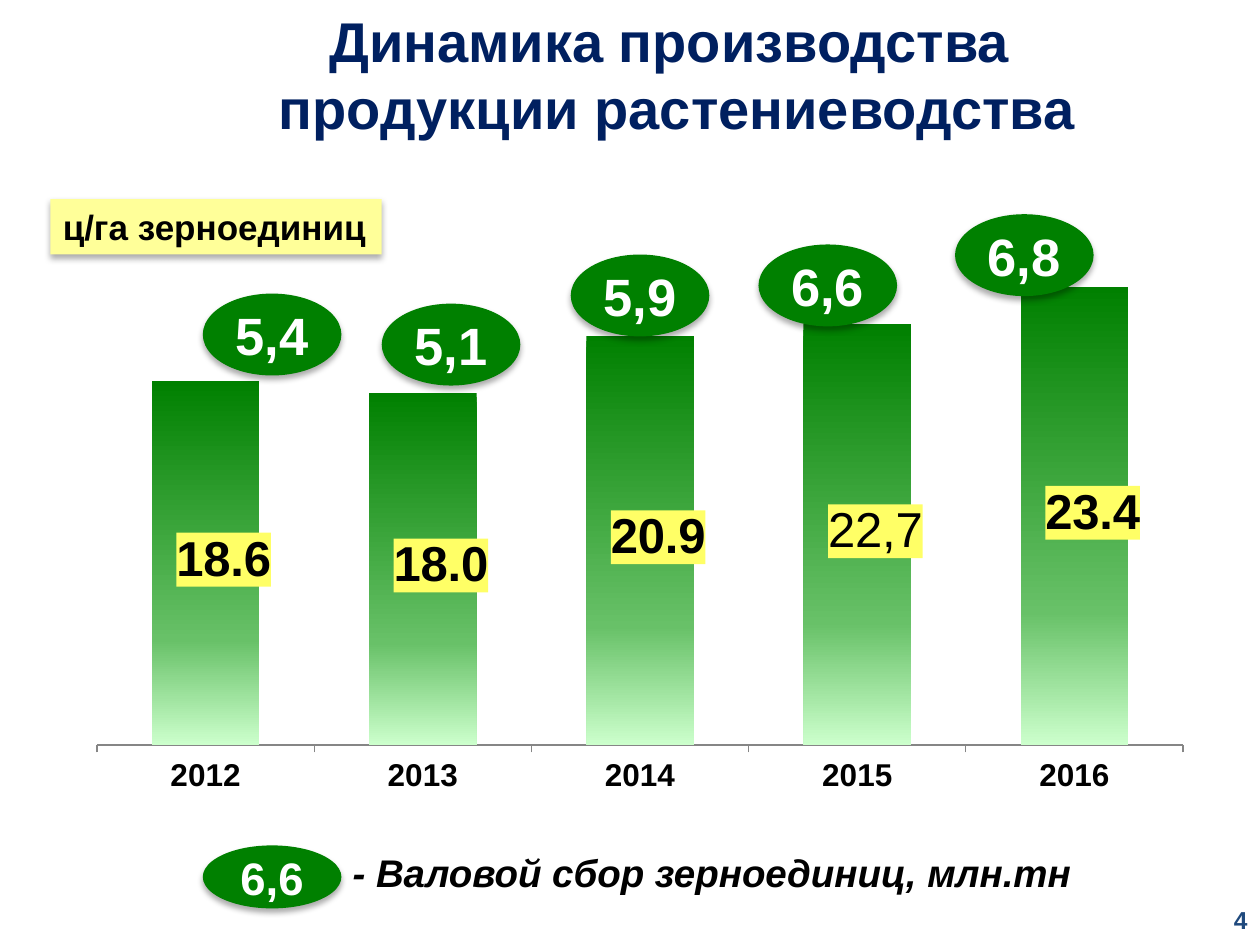
from lxml import etree
from pptx import Presentation
from pptx import oxml
from pptx.chart.data import CategoryChartData
from pptx.dml.color import RGBColor
from pptx.enum import chart as charts, shapes, text
from pptx.oxml import ns
from pptx.util import Inches, Pt

NAVY = RGBColor(0x00, 0x20, 0x60)
BLUE = RGBColor(0x1F, 0x49, 0x7D)
GREEN = RGBColor(0x00, 0x80, 0x00)
MINT = RGBColor(0xCC, 0xFF, 0xCC)
MID_GREEN = RGBColor(0x68, 0xC1, 0x68)
PALE_YELLOW = RGBColor(0xFF, 0xFF, 0x99)
YELLOW = RGBColor(0xFF, 0xFF, 0x66)
GRAY = RGBColor(0x86, 0x86, 0x86)
BLACK = RGBColor(0, 0, 0)
WHITE = RGBColor(0xFF, 0xFF, 0xFF)

ALIGN = text.PP_ALIGN
ANCHOR = text.MSO_ANCHOR
SHADOW = (
    f'<a:effectLst {ns.nsdecls("a")}>'
    '<a:outerShdw blurRad="44450" dist="27940" dir="5400000" algn="ctr" rotWithShape="0">'
    '<a:srgbClr val="000000"><a:alpha val="32000"/></a:srgbClr>'
    '</a:outerShdw></a:effectLst>'
)


def chart_layout(inner=False, **fractions):
    layout = etree.Element(ns.qn("c:layout"))
    manual = etree.SubElement(layout, ns.qn("c:manualLayout"))
    if inner:
        etree.SubElement(manual, ns.qn("c:layoutTarget"), val="inner")
        for mode in ("xMode", "yMode"):
            etree.SubElement(manual, ns.qn(f"c:{mode}"), val="edge")
    for name, value in fractions.items():
        etree.SubElement(manual, ns.qn(f"c:{name}"), val=str(value))
    return layout


class HarvestSlide:
    face = "Arial"

    def __init__(self, deck):
        self.slide = deck.slides.add_slide(deck.slide_layouts[5])

    def style(self, font, size, color, bold=True, italic=False):
        font.name = self.face
        font.size = Pt(size)
        font.bold = bold
        font.italic = italic
        font.color.rgb = color

    def put_text(self, shape, lines, size, color, align=ALIGN.LEFT,
                 anchor=ANCHOR.TOP, wrap=True, italic=False):
        frame = shape.text_frame
        frame.word_wrap = wrap
        frame.auto_size = text.MSO_AUTO_SIZE.NONE
        frame.vertical_anchor = anchor
        frame.text = "\n".join(lines)
        for paragraph in frame.paragraphs:
            paragraph.alignment = align
            self.style(paragraph.font, size, color, italic=italic)

    def title(self, lines, box):
        heading = self.slide.shapes.title
        heading.left, heading.top, heading.width, heading.height = map(Inches, box)
        self.put_text(heading, lines, 32, NAVY, ALIGN.CENTER)

    def label(self, line, box, size, color, **options):
        self.put_text(self.slide.shapes.add_textbox(*map(Inches, box)),
                      [line], size, color, **options)

    def filled(self, kind, box, color):
        shape = self.slide.shapes.add_shape(kind, *map(Inches, box))
        shape.fill.solid()
        shape.fill.fore_color.rgb = color
        shape.line.fill.background()
        shape._element.spPr.append(oxml.parse_xml(SHADOW))
        return shape

    def tag(self, line, box):
        tag = self.filled(shapes.MSO_SHAPE.RECTANGLE, box, PALE_YELLOW)
        self.put_text(tag, [line], 20, BLACK, wrap=False)

    def oval(self, value, left, top, height=0.65, size=30):
        oval = self.filled(shapes.MSO_SHAPE.OVAL, (left, top, 1.1, height), GREEN)
        self.put_text(oval, [value], size, WHITE, ALIGN.CENTER, ANCHOR.MIDDLE)
        oval.text_frame.margin_top = oval.text_frame.margin_bottom = 0

    def value_label(self, point, custom):
        label = point.data_label
        if custom:
            label.text_frame.text = custom
            self.style(label.text_frame.paragraphs[0].font, 28, BLACK, bold=False)
        else:
            self.style(label.font, 28, BLACK)
        element = label._dLbl
        element.find(ns.qn("c:idx")).addnext(chart_layout(x=0.016, y=-0.006))
        follower = element.find(ns.qn("c:txPr"))
        if follower is None:
            follower = element.find(ns.qn("c:showLegendKey"))
        follower.addprevious(oxml.parse_xml(
            f'<c:spPr {ns.nsdecls("c", "a")}><a:solidFill>'
            f'<a:srgbClr val="{YELLOW}"/></a:solidFill></c:spPr>'))

    def columns(self, yields, custom_labels, box):
        data = CategoryChartData(number_format="0.0")
        data.categories = yields.keys()
        data.add_series("Series 1", yields.values())
        chart = self.slide.shapes.add_chart(
            charts.XL_CHART_TYPE.COLUMN_STACKED, *map(Inches, box), data).chart
        chart.has_legend = False
        chart.has_title = False
        self.style(chart.font, 18, BLACK)

        years = chart.category_axis
        years.major_tick_mark = charts.XL_TICK_MARK.OUTSIDE
        years.format.line.color.rgb = GRAY
        self.style(years.tick_labels.font, 18, BLACK)
        scale = chart.value_axis
        scale.minimum_scale, scale.maximum_scale = 0, 25
        scale.has_major_gridlines = False
        scale.visible = False

        plot = chart.plots[0]
        plot.gap_width, plot.overlap = 102, 100
        plot.vary_by_categories = False
        series = plot.series[0]
        series.invert_if_negative = False
        stops = "".join(
            f'<a:gs pos="{place * 1000}"><a:srgbClr val="{color}"/></a:gs>'
            for place, color in ((0, GREEN), (71, MID_GREEN), (100, MINT)))
        series.format.fill.background()
        fill = series._element.spPr.find(ns.qn("a:noFill"))
        fill.getparent().replace(fill, oxml.parse_xml(
            f'<a:gradFill {ns.nsdecls("a")} rotWithShape="1"><a:gsLst>{stops}</a:gsLst>'
            '<a:lin ang="5400000" scaled="0"/></a:gradFill>'))
        for index, year in enumerate(yields):
            self.value_label(series.points[index], custom_labels.get(year))

        area = chart._chartSpace.chart.plotArea
        for layout in area.findall(ns.qn("c:layout")):
            area.remove(layout)
        area.insert(0, chart_layout(inner=True, x=0.02, y=0.02, w=0.96, h=0.875))


def main():
    deck = Presentation()
    deck.slide_width, deck.slide_height = Inches(10), Inches(7.5)
    page = HarvestSlide(deck)
    page.title(["Динамика производства ", "продукции растениеводства"], (0.75, 0, 9.25, 1.18))
    page.tag("ц/га зерноединиц", (0.4, 1.58, 2.63, 0.44))
    yields = {"2012": 18.6, "2013": 18.0, "2014": 20.9, "2015": 21.5, "2016": 23.4}
    page.columns(yields, {"2015": "22,7"}, (0.59, 1.94, 8.98, 4.44))

    harvests = (("5,4", 1.61, 2.33), ("5,1", 3.03, 2.41), ("5,9", 4.53, 2.02),
                ("6,6", 6.02, 1.94), ("6,8", 7.58, 1.7))
    for value, left, top in harvests:
        page.oval(value, left, top)

    page.oval("6,6", 1.61, 6.71, height=0.5, size=26)
    page.label("- Валовой сбор зерноединиц, млн.тн", (2.7, 6.69, 5.98, 0.47),
               22, BLACK, wrap=False, italic=True)
    page.label("4", (9.52, 7.1, 0.48, 0.4), 14, BLUE,
               align=ALIGN.RIGHT, anchor=ANCHOR.MIDDLE)
    deck.save("out.pptx")


if __name__ == "__main__":
    main()
